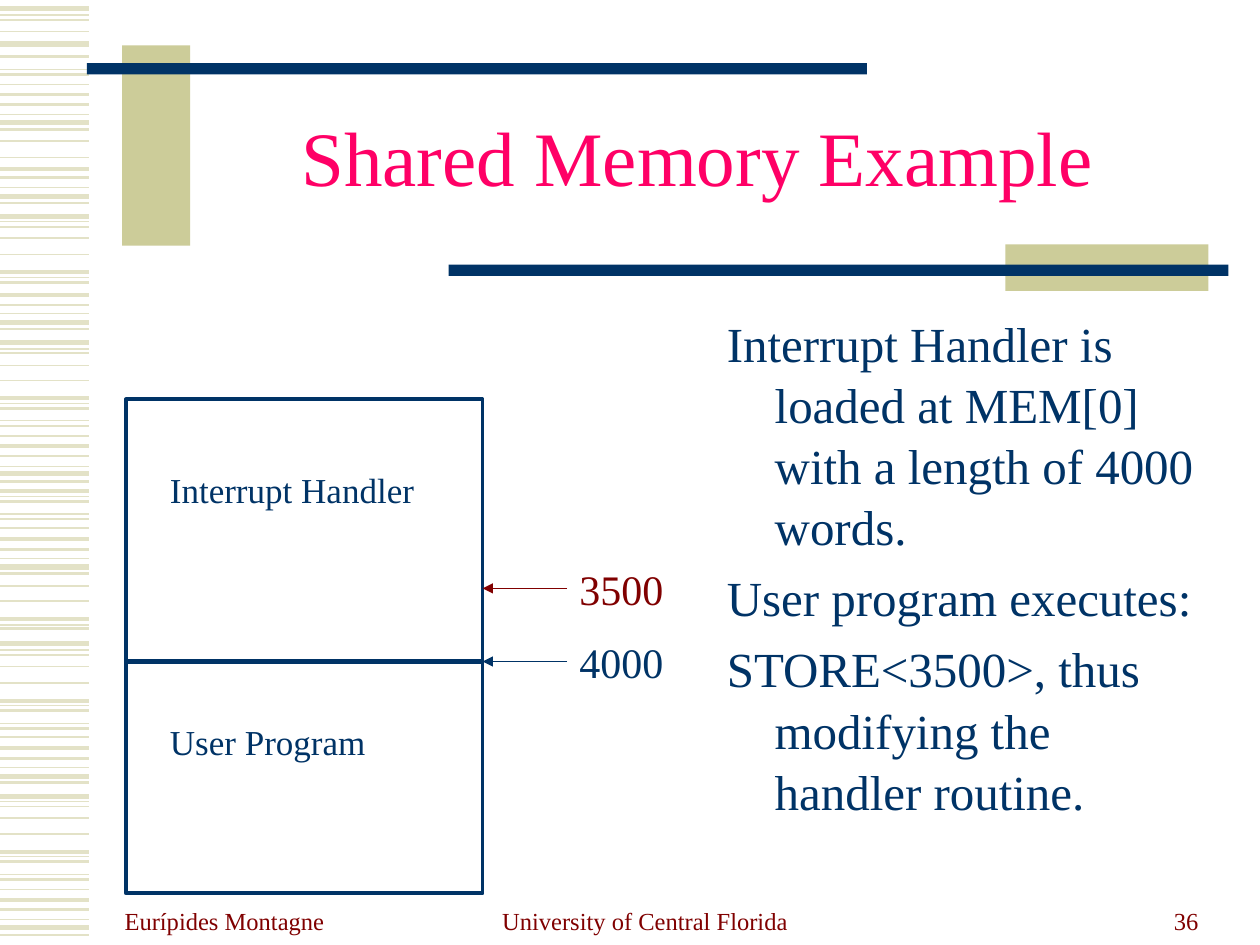
from dataclasses import dataclass

from lxml import etree
from pptx import Presentation
from pptx import util as u
from pptx.dml.color import RGBColor
from pptx.enum import shapes, text
from pptx.oxml import ns


@dataclass(frozen=True)
class Theme:
    font: str = "Times New Roman"
    navy: str = "003366"
    maroon: str = "800000"
    pink: str = "FF0066"
    khaki: str = "CCCC99"
    stripe: str = "E3E2C7"
    title: int = 44
    body: int = 28
    address: int = 24
    label: int = 20
    footer: int = 14


T = Theme()
LEFT, CENTER, RIGHT = text.PP_ALIGN.LEFT, text.PP_ALIGN.CENTER, text.PP_ALIGN.RIGHT
TOP, MIDDLE, BOTTOM = text.MSO_ANCHOR.TOP, text.MSO_ANCHOR.MIDDLE, text.MSO_ANCHOR.BOTTOM

# Heights of the left-edge stripes, by line width in points
STRIPES = {
    0.75: [0.12, 0.55, 0.91, 1.49, 1.76, 2.2, 2.49, 2.77, 3.2, 3.34, 3.7, 3.94, 4.08,
           4.43, 4.96, 5.16, 5.6, 5.74, 6.09, 6.36, 6.8, 6.94, 7.3],
    1: [0.16, 0.25, 0.67, 1.12, 1.25, 1.8, 1.89, 2.02, 2.8, 2.9, 3.02, 3.46, 4.19,
        4.65, 4.77, 5.2, 5.29, 5.42, 5.85, 6.4, 6.49, 6.62, 7.06],
    1.5: [0.45, 0.59, 0.83, 1.03, 1.41, 1.61, 2.24, 2.42, 2.61, 3.24, 3.38, 3.62, 3.82,
          3.98, 4.12, 4.36, 4.55, 4.99, 5.64, 5.78, 6.02, 6.21, 6.84, 6.98, 7.22, 7.42],
    2.25: [0.75, 1.34, 2.16, 2.34, 3.16, 3.54, 3.9, 4.28, 4.91, 5.56, 5.94, 6.76, 7.14],
    3: [0.07, 0.35, 0.97, 1.56, 1.72, 2.56, 2.72, 3.76, 4.5, 5.11, 6.16, 6.32, 7.36],
}


def add_rect(s, box, fill=None, line=None, width=2.25):
    sp = s.shapes.add_shape(shapes.MSO_SHAPE.RECTANGLE, *map(u.Inches, box))
    sp.shadow.inherit = False
    if fill:
        sp.fill.solid()
        sp.fill.fore_color.rgb = RGBColor.from_string(fill)
    else:
        sp.fill.background()
    if line:
        sp.line.color.rgb = RGBColor.from_string(line)
        sp.line.width = u.Pt(width)
    else:
        sp.line.fill.background()


def add_line(s, x1, x2, y, color, width, arrow=False):
    """Horizontal line, with an optional arrowhead at x2."""
    ends = map(u.Inches, (x1, y, x2, y))
    sp = s.shapes.add_connector(shapes.MSO_CONNECTOR.STRAIGHT, *ends)
    sp.line.color.rgb = RGBColor.from_string(color)
    sp.line.width = u.Pt(width)
    if arrow:
        etree.SubElement(sp.line._get_or_add_ln(), ns.qn("a:tailEnd"), type="triangle")
    etree.SubElement(sp._element.spPr, ns.qn("a:effectLst"))


def add_text(s, box, *paragraphs, size, color=T.navy, align=LEFT, anchor=TOP,
             spacing=None, before=0, hanging=0):
    tf = s.shapes.add_textbox(*map(u.Inches, box)).text_frame
    tf.word_wrap = True
    tf.vertical_anchor = anchor
    for i, words in enumerate(paragraphs):
        p = tf.paragraphs[0] if i == 0 else tf.add_paragraph()
        p.alignment = align
        if spacing:
            p.line_spacing = spacing
        if before:
            p.space_before = u.Pt(before)
        if hanging:
            pPr = p._p.get_or_add_pPr()
            pPr.set("marL", str(u.Inches(hanging)))
            pPr.set("indent", str(-u.Inches(hanging)))
        r = p.add_run()
        r.text = words
        r.font.name = T.font
        r.font.size = u.Pt(size)
        r.font.color.rgb = RGBColor.from_string(color)


def add_address(s, words, y, color):
    """Arrow into the memory block with its address beside it."""
    add_line(s, 4.5, 3.83, y, color, 0.75, arrow=True)
    add_text(s, (4.5, y - 0.25, 1, 0.5), words, size=T.address, color=color)


def add_background(s):
    for width, heights in STRIPES.items():
        for y in heights:
            add_line(s, 0, 0.71, y, T.stripe, width)
    add_rect(s, (0.97, 0.36, 0.54, 1.59), fill=T.khaki)
    add_rect(s, (0.69, 0.5, 6.19, 0.09), fill=T.navy)
    add_rect(s, (7.98, 1.94, 1.61, 0.37), fill=T.khaki)
    add_rect(s, (3.56, 2.1, 6.19, 0.09), fill=T.navy)


def add_footer(s):
    for x, w, words, align in [
        (0.89, 2.08, "Eurípides Montagne", LEFT),
        (3.43, 3.38, "University of Central Florida", CENTER),
        (7.21, 2.4, "36", RIGHT),
    ]:
        add_text(s, (x, 6.97, w, 0.5), words, size=T.footer, color=T.maroon,
                 align=align, anchor=BOTTOM)


def add_memory(s):
    add_rect(s, (1, 3.17, 2.83, 3.92), line=T.navy)
    add_line(s, 1, 3.83, 5.25, T.navy, 3)
    add_text(s, (1.25, 3.67, 2.5, 0.43), "Interrupt Handler", size=T.label)
    add_text(s, (1.25, 5.67, 2.25, 0.43), "User Program", size=T.label)
    add_address(s, "4000", 5.25, T.navy)
    add_address(s, "3500", 4.67, T.maroon)


def main():
    prs = Presentation()
    prs.slide_width, prs.slide_height = u.Inches(10), u.Inches(7.5)
    s = prs.slides.add_slide(prs.slide_layouts[6])

    add_background(s)
    add_footer(s)

    # Title and explanation
    add_text(s, (1.5, 0.67, 8.07, 1.25), "Shared Memory Example", size=T.title,
             color=T.pink, align=CENTER, anchor=MIDDLE, spacing=0.85)
    add_text(s, (5.67, 2.42, 3.92, 4.16),
             "Interrupt Handler is loaded at MEM[0] with a length of 4000 words.",
             "User program executes:",
             "STORE<3500>, thus modifying the handler routine.",
             size=T.body, spacing=1.04, before=5.6, hanging=0.38)

    # Memory diagram
    add_memory(s)
    prs.save("out.pptx")


if __name__ == "__main__":
    main()
